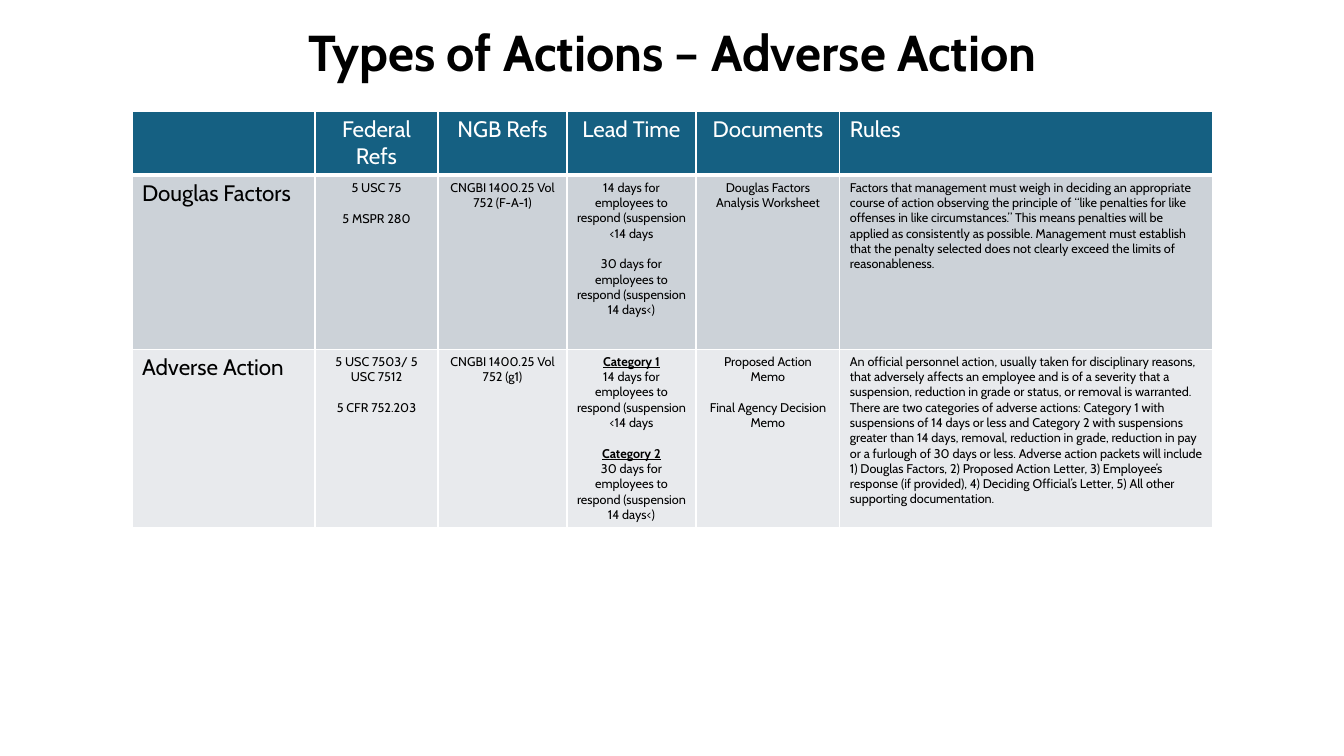
from dataclasses import dataclass

from lxml.etree import SubElement
from pptx import Presentation
from pptx.dml.color import RGBColor
from pptx.enum.text import MSO_ANCHOR, PP_ALIGN as Align
from pptx.oxml.ns import qn
from pptx.util import Emu, Pt

EMU_PER_PX = 914400 / 100.8


def px(length):
    return Emu(round(length * EMU_PER_PX))


@dataclass(frozen=True)
class Theme:
    font: str = "Cabin"
    ink: str = "000000"
    paper: str = "FFFFFF"
    header_fill: str = "156082"
    row_fills: tuple = ("CCD2D8", "E8EAED")
    title_size: int = 36
    label_size: int = 16
    body_size: int = 9
    section_gap: int = 11
    thin_border: int = 1
    header_border: int = 3


@dataclass(frozen=True)
class Line:
    """One paragraph; a section line stands one line clear of the text above."""
    text: str
    section: bool = False
    heading: bool = False


def set_attributes(target, values):
    for name, value in values.items():
        setattr(target, name, value)


class SlideBuilder:
    def __init__(self, slide, theme):
        self.slide = slide
        self.theme = theme

    def paragraph(self, paragraph, line, size, color, alignment):
        set_attributes(paragraph, {
            "alignment": alignment,
            "space_before": Pt(self.theme.section_gap if line.section else 0),
        })
        run = paragraph.add_run()
        run.text = line.text
        set_attributes(run.font, {
            "name": self.theme.font,
            "size": Pt(size),
            "bold": line.heading,
            "underline": line.heading,
        })
        run.font.color.rgb = RGBColor.from_string(color)
        return run

    def title(self, text, left, top, width, height):
        box = self.slide.shapes.add_textbox(px(left), px(top), px(width), px(height))
        set_attributes(box.text_frame, {
            "word_wrap": True, "vertical_anchor": MSO_ANCHOR.MIDDLE})
        paragraph = box.text_frame.paragraphs[0]
        paragraph.line_spacing = 0.9
        run = self.paragraph(paragraph, Line(text), self.theme.title_size,
                             self.theme.ink, Align.CENTER)
        run.font.bold = True

    def borders(self, cell, top, bottom):
        properties = cell._tc.get_or_add_tcPr()
        thin = self.theme.thin_border
        sides = {"lnL": thin, "lnR": thin, "lnT": top, "lnB": bottom}
        for index, (side, width) in enumerate(sides.items()):
            border = SubElement(properties, qn(f"a:{side}"), w=str(Pt(width)))
            fill = SubElement(border, qn("a:solidFill"))
            SubElement(fill, qn("a:srgbClr"), val=self.theme.paper)
            properties.insert(index, border)

    def cell(self, cell, lines, row, column, last_column):
        theme = self.theme
        header = row == 0
        cell.fill.solid()
        cell.fill.fore_color.rgb = RGBColor.from_string(
            theme.header_fill if header else theme.row_fills[(row - 1) % 2])
        self.borders(cell,
                     theme.header_border if row == 1 else theme.thin_border,
                     theme.header_border if header else theme.thin_border)
        size = theme.label_size if header or column == 0 else theme.body_size
        color = theme.paper if header else theme.ink
        alignment = Align.LEFT if column in (0, last_column) else Align.CENTER
        frame = cell.text_frame
        for index, line in enumerate(lines):
            paragraph = frame.add_paragraph() if index else frame.paragraphs[0]
            self.paragraph(paragraph, line, size, color, alignment)

    def table(self, rows, left, top, widths, heights):
        table = self.slide.shapes.add_table(
            len(heights), len(widths), px(left), px(top),
            px(sum(widths)), px(sum(heights))).table
        set_attributes(table, {"first_row": False, "horz_banding": False})
        for column, width in zip(table.columns, widths):
            column.width = px(width)
        for row, height in zip(table.rows, heights):
            row.height = px(height)
        for row, contents in enumerate(rows):
            for column, lines in enumerate(contents):
                self.cell(table.cell(row, column), lines, row, column, len(widths) - 1)


SHORT_SUSPENSION = "14 days for employees to respond (suspension <14 days"
LONG_SUSPENSION = "30 days for employees to respond (suspension 14 days<)"

HEADER = [[]] + [[Line(text)] for text in (
    "Federal Refs", "NGB Refs", "Lead Time", "Documents", "Rules")]

DOUGLAS_FACTORS = [
    [Line("Douglas Factors")],
    [Line("5 USC 75"), Line("5 MSPR 280", section=True)],
    [Line("CNGBI 1400.25 Vol 752 (F-A-1)")],
    [Line(SHORT_SUSPENSION), Line(LONG_SUSPENSION, section=True)],
    [Line("Douglas Factors Analysis Worksheet")],
    [Line("Factors that management must weigh in deciding an appropriate course of "
          "action observing the principle of “like penalties for like offenses in like "
          "circumstances.” This means penalties will be applied as consistently as "
          "possible. Management must establish that the penalty selected does not "
          "clearly exceed the limits of reasonableness.")],
]

ADVERSE_ACTION = [
    [Line("Adverse Action")],
    [Line("5 USC 7503/ 5 USC 7512"), Line("5 CFR 752.203", section=True)],
    [Line("CNGBI 1400.25 Vol 752 (g1)")],
    [Line("Category 1", heading=True), Line(SHORT_SUSPENSION),
     Line("Category 2", section=True, heading=True), Line(LONG_SUSPENSION)],
    [Line("Proposed Action Memo"), Line("Final Agency Decision Memo", section=True)],
    [Line("An official personnel action, usually taken for disciplinary reasons, that "
          "adversely affects an employee and is of a severity that a suspension, "
          "reduction in grade or status, or removal is warranted. There are two "
          "categories of adverse actions: Category 1 with suspensions of 14 days or "
          "less and Category 2 with suspensions greater than 14 days, removal, "
          "reduction in grade, reduction in pay or a furlough of 30 days or less. "
          "Adverse action packets will include 1) Douglas Factors, 2) Proposed Action "
          "Letter, 3) Employee’s response (if provided), 4) Deciding Official’s "
          "Letter, 5) All other supporting documentation.")],
]


def main():
    presentation = Presentation()
    set_attributes(presentation, {"slide_width": px(1344), "slide_height": px(756)})
    slide = presentation.slides.add_slide(presentation.slide_layouts[6])
    builder = SlideBuilder(slide, Theme())
    builder.table([HEADER, DOUGLAS_FACTORS, ADVERSE_ACTION], left=132, top=111,
                  widths=[183, 123, 129, 129, 144, 373], heights=[64, 174, 178])
    builder.title("Types of Actions – Adverse Action", 93, 0, 1159, 111)
    presentation.save("out.pptx")


if __name__ == "__main__":
    main()
